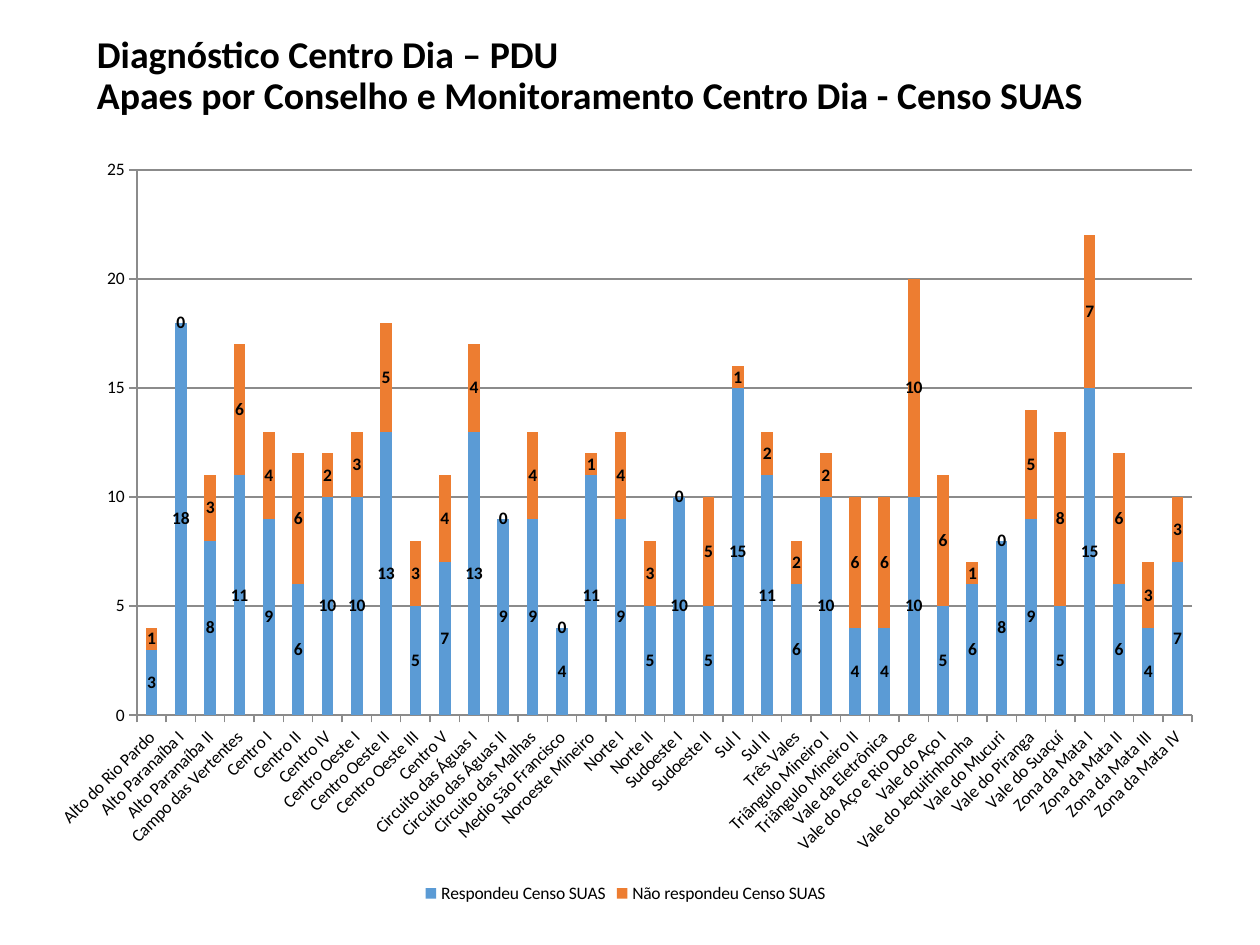
from pptx import Presentation
from pptx.chart.data import CategoryChartData
from pptx.dml.color import RGBColor
from pptx.enum.chart import XL_CHART_TYPE, XL_LABEL_POSITION, XL_LEGEND_POSITION, XL_TICK_MARK
from pptx.enum.text import MSO_ANCHOR, PP_ALIGN
from pptx.util import Cm, Pt


def color(value):
    return RGBColor.from_string(value)


BLACK = "000000"
GRAY = "8B8B8B"
FONT = "Calibri"

# Council, answered the census, did not answer
councils = [
    ("Alto do Rio Pardo", 3, 1),
    ("Alto Paranaíba I", 18, 0),
    ("Alto Paranaíba II", 8, 3),
    ("Campo das Vertentes", 11, 6),
    ("Centro I", 9, 4),
    ("Centro II", 6, 6),
    ("Centro IV", 10, 2),
    ("Centro Oeste I", 10, 3),
    ("Centro Oeste II", 13, 5),
    ("Centro Oeste III", 5, 3),
    ("Centro V", 7, 4),
    ("Circuito das Águas I", 13, 4),
    ("Circuito das Águas II", 9, 0),
    ("Circuito das Malhas", 9, 4),
    ("Medio São Francisco", 4, 0),
    ("Noroeste Mineiro", 11, 1),
    ("Norte I", 9, 4),
    ("Norte II", 5, 3),
    ("Sudoeste I", 10, 0),
    ("Sudoeste II", 5, 5),
    ("Sul I", 15, 1),
    ("Sul II", 11, 2),
    ("Três Vales", 6, 2),
    ("Triângulo Mineiro I", 10, 2),
    ("Triângulo Mineiro II", 4, 6),
    ("Vale da Eletrônica", 4, 6),
    ("Vale do Aço e Rio Doce", 10, 10),
    ("Vale do Aço I", 5, 6),
    ("Vale do Jequitinhonha ", 6, 1),
    ("Vale do Mucuri", 8, 0),
    ("Vale do Piranga", 9, 5),
    ("Vale do Suaçuí", 5, 8),
    ("Zona da Mata I", 15, 7),
    ("Zona da Mata II", 6, 6),
    ("Zona da Mata III", 4, 3),
    ("Zona da Mata IV", 7, 3),
]
names, answered, unanswered = zip(*councils)

presentation = Presentation()
presentation.slide_width = Cm(25.4)
presentation.slide_height = Cm(19.05)
slide = presentation.slides.add_slide(presentation.slide_layouts[5])

# Title
title = slide.shapes.title
title.left, title.top, title.width, title.height = Cm(1.7), Cm(0.33), Cm(21.9), Cm(2.44)
title.text_frame.text = (
    "Diagnóstico Centro Dia – PDU \v"
    "Apaes por Conselho e Monitoramento Centro Dia - Censo SUAS"
)
title.text_frame.word_wrap = True
title.text_frame.vertical_anchor = MSO_ANCHOR.MIDDLE
paragraph = title.text_frame.paragraphs[0]
paragraph.alignment = PP_ALIGN.LEFT
paragraph.line_spacing = 0.9
paragraph.font.name = FONT
paragraph.font.size = Pt(21.6)
paragraph.font.bold = True
paragraph.font.color.rgb = color(BLACK)

# Stacked column chart
chart_data = CategoryChartData()
chart_data.categories = names
chart_data.add_series("Respondeu Censo SUAS", answered)
chart_data.add_series("Não respondeu Censo SUAS", unanswered)
chart = slide.shapes.add_chart(
    XL_CHART_TYPE.COLUMN_STACKED, Cm(0.71), Cm(2.92), Cm(23.8), Cm(15.39), chart_data
).chart
chart.has_title = False
chart.font.name = FONT
chart.font.size = Pt(10)
chart.font.color.rgb = color(BLACK)

# Columns and their labels
plot = chart.plots[0]
plot.gap_width = 150
plot.overlap = 100
plot.vary_by_categories = False
for series, fill in zip(plot.series, ("5B9BD5", "ED7D31")):
    series.format.fill.solid()
    series.format.fill.fore_color.rgb = color(fill)
    labels = series.data_labels
    labels.show_value = True
    labels.position = XL_LABEL_POSITION.CENTER
    labels.font.name = FONT
    labels.font.size = Pt(10)
    labels.font.bold = True
    labels.font.color.rgb = color(BLACK)

# Axes
for axis in (chart.category_axis, chart.value_axis):
    axis.major_tick_mark = XL_TICK_MARK.OUTSIDE
    axis.minor_tick_mark = XL_TICK_MARK.NONE
    axis.format.line.color.rgb = color(GRAY)
    axis.tick_labels.font.size = Pt(10)
for body in chart.category_axis._element.xpath("c:txPr/a:bodyPr"):
    body.set("rot", "-2700000")
chart.value_axis.minimum_scale = 0
chart.value_axis.maximum_scale = 25
chart.value_axis.major_unit = 5
chart.value_axis.has_major_gridlines = True
chart.value_axis.major_gridlines.format.line.color.rgb = color(GRAY)

# Legend
chart.has_legend = True
chart.legend.position = XL_LEGEND_POSITION.BOTTOM
chart.legend.include_in_layout = False

presentation.save("out.pptx")
